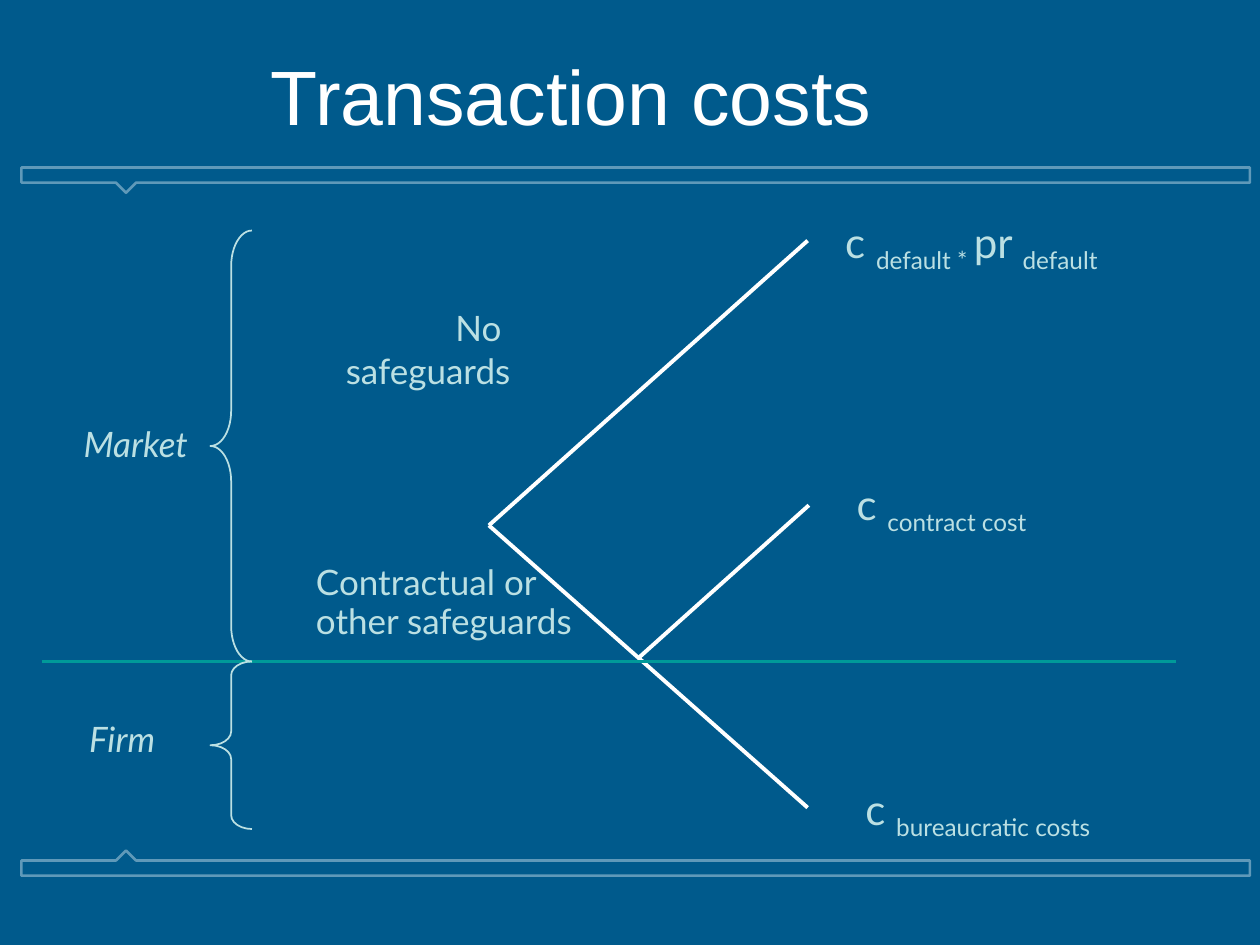
from dataclasses import dataclass

from lxml import etree
from pptx import Presentation
from pptx.dml.color import RGBColor
from pptx.enum.shapes import MSO_CONNECTOR, MSO_SHAPE
from pptx.enum.text import MSO_ANCHOR, MSO_AUTO_SIZE, PP_ALIGN
from pptx.oxml.ns import qn
from pptx.util import Inches, Pt

LEFT, RIGHT = PP_ALIGN.LEFT, PP_ALIGN.RIGHT
FIT = MSO_AUTO_SIZE.SHAPE_TO_FIT_TEXT


@dataclass(frozen=True)
class Theme:
    background = RGBColor(0x00, 0x5A, 0x8C)
    band = RGBColor(0x5F, 0x99, 0xB9)
    white = RGBColor(0xFF, 0xFF, 0xFF)
    text = RGBColor(0xBB, 0xE0, 0xE3)
    divider = RGBColor(0x00, 0x99, 0x99)
    title_font = "Arial"
    font = "Lato"
    title_size = Pt(44)
    label_size = Pt(20)
    cost_size = Pt(24)


theme = Theme()


def add_line(s, start, end, color):
    line = s.shapes.add_connector(
        MSO_CONNECTOR.STRAIGHT, *(Inches(v) for v in start + end))
    line.line.color.rgb = color
    line.line.width = Pt(2.25)
    etree.SubElement(line._element.spPr, qn("a:effectLst"))


def add_text(s, box, wrap=False):
    """Add an empty text box and return its text frame."""
    tf = s.shapes.add_textbox(*(Inches(v) for v in box)).text_frame
    tf.word_wrap = wrap
    tf.auto_size = FIT
    return tf


prs = Presentation()
prs.slide_width, prs.slide_height = Inches(10), Inches(7.5)
s = prs.slides.add_slide(prs.slide_layouts[5])
s.background.fill.solid()
s.background.fill.fore_color.rgb = theme.background

# Notched bands, mirrored above and below the diagram
for edge, direction in ((6.95, -1), (1.33, 1)):
    inner, tip = edge + direction * 0.12, edge + direction * 0.2
    points = [(9.92, edge), (9.92, inner), (1.08, inner), (1, tip),
              (0.92, inner), (0.17, inner)]
    builder = s.shapes.build_freeform(Inches(0.17), Inches(edge))
    builder.add_line_segments([(Inches(x), Inches(y)) for x, y in points])
    band = builder.convert_to_shape()
    band.shadow.inherit = False
    band.fill.solid()
    band.fill.fore_color.rgb = theme.background
    band.line.color.rgb = theme.band
    band.line.width = Pt(1.5)

# Title
title = s.shapes.title
title.left, title.top = Inches(2.05), Inches(0.33)
title.width, title.height = Inches(6.74), Inches(0.84)
tf = title.text_frame
tf.text = "Transaction costs"
tf.vertical_anchor = MSO_ANCHOR.MIDDLE
p = tf.paragraphs[0]
p.alignment = LEFT
p.font.name, p.font.size = theme.title_font, theme.title_size
p.font.color.rgb = theme.white

# Decision tree
for start, end in (
    ((3.88, 4.17), (6.41, 1.91)),
    ((3.88, 4.17), (6.41, 6.41)),
    ((5.07, 5.22), (6.42, 4.01)),
):
    add_line(s, start, end, theme.white)

# Branch and zone labels; \v is a line break inside a paragraph
labels = [
    ((2.61, 2.41, 1.54, 0.75), ["No ", "safeguards"], RIGHT, False),
    ((2.41, 4.42, 2.27, 0.74), ["Contractual or \vother safeguards"], LEFT, False),
    ((0.59, 5.67, 0.74, 0.42), ["Firm"], RIGHT, True),
    ((0.55, 3.33, 1.04, 0.42), ["Market"], RIGHT, True),
]
for box, lines, align, italic in labels:
    tf = add_text(s, box)
    for i, text in enumerate(lines):
        p = tf.add_paragraph() if i else tf.paragraphs[0]
        p.text = text
        p.alignment = align
        p.line_spacing = 1.0 if i else 0.95
        p.font.name, p.font.size = theme.font, theme.label_size
        p.font.italic = italic
        p.font.color.rgb = theme.text

# Border between market and firm
add_line(s, (0.33, 5.25), (9.33, 5.25), theme.divider)

# Cost at each leaf: normal and subscript runs alternate
costs = [
    ((6.61, 1.67, 3.39, 0.56), ["c ", "default * ", "pr ", "default"], True),
    ((6.7, 3.75, 1.56, 0.56), ["c ", "contract cost"], False),
    ((6.77, 6.17, 2.01, 0.56), ["c ", "bureaucratic costs"], False),
]
for box, parts, wrap in costs:
    p = add_text(s, box, wrap).paragraphs[0]
    p.font.name, p.font.size = theme.font, theme.cost_size
    p.font.color.rgb = theme.text
    for i, text in enumerate(parts):
        r = p.add_run()
        r.text = text
        if i % 2:
            r._r.get_or_add_rPr().set("baseline", "-25000")

# Braces for the two zones
for top, height, curve in ((1.83, 3.42, 0.854), (5.25, 1.33, 0.333)):
    brace = s.shapes.add_shape(
        MSO_SHAPE.LEFT_BRACE, Inches(1.67), Inches(top), Inches(0.33), Inches(height))
    brace.adjustments[0] = curve
    brace.shadow.inherit = False
    brace.fill.background()
    brace.line.color.rgb = theme.text
    brace.line.width = Pt(1)

prs.save("out.pptx")
